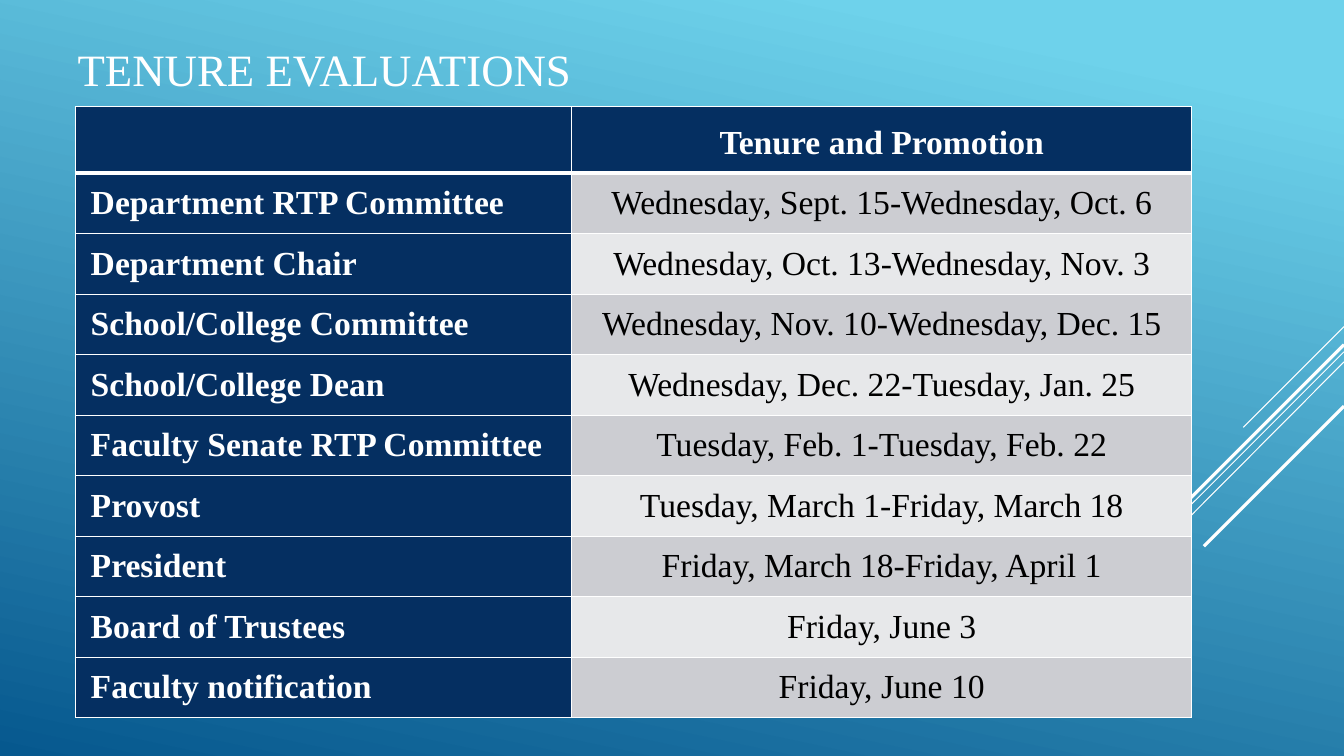
"""Build a slide with the tenure evaluation calendar."""
from lxml import etree
from pptx import Presentation
from pptx.dml.color import RGBColor
from pptx.enum.shapes import MSO_CONNECTOR
from pptx.enum.text import MSO_ANCHOR, MSO_AUTO_SIZE, PP_ALIGN
from pptx.oxml.ns import qn
from pptx.util import Inches, Pt

STRAIGHT = MSO_CONNECTOR.STRAIGHT
MIDDLE = MSO_ANCHOR.MIDDLE
NO_AUTOFIT = MSO_AUTO_SIZE.NONE
LEFT, CENTER = PP_ALIGN.LEFT, PP_ALIGN.CENTER

FONT = "Times New Roman"
COLORS = {
    "sky": "6ED2EB",
    "ocean": "06588E",
    "navy": "052F61",
    "dark_band": "CCCDD2",
    "light_band": "E7E8EA",
    "white": "FFFFFF",
    "black": "000000",
}
SCHEDULE = [
    ("", "Tenure and Promotion"),
    ("Department RTP Committee", "Wednesday, Sept. 15-Wednesday, Oct. 6"),
    ("Department Chair", "Wednesday, Oct. 13-Wednesday, Nov. 3"),
    ("School/College Committee", "Wednesday, Nov. 10-Wednesday, Dec. 15"),
    ("School/College Dean", "Wednesday, Dec. 22-Tuesday, Jan. 25"),
    ("Faculty Senate RTP Committee", "Tuesday, Feb. 1-Tuesday, Feb. 22"),
    ("Provost", "Tuesday, March 1-Friday, March 18"),
    ("President", "Friday, March 18-Friday, April 1"),
    ("Board of Trustees", "Friday, June 3"),
    ("Faculty notification", "Friday, June 10"),
]
STREAKS = [
    (3.24, 12.33, 4.24, 0.75),
    (3.49, 10.07, 6.75, 0.75),
    (3.59, 11.26, 5.67, 0.75),
    (3.42, 11.42, 5.33, 2.25),
    (4.03, 11.94, 5.42, 2.25),
]


def style_text(paragraph, size, color, bold, align):
    paragraph.alignment = align
    formats = {"name": FONT, "size": Pt(size), "bold": bold}
    for attribute, value in formats.items():
        setattr(paragraph.font, attribute, value)
    paragraph.font.color.rgb = RGBColor.from_string(COLORS[color])


def add_borders(cell, widths):
    properties = cell._tc.get_or_add_tcPr()
    for position, (side, width) in enumerate(widths.items()):
        border = etree.Element(qn(f"a:ln{side}"), w=str(Pt(width)))
        fill = etree.SubElement(border, qn("a:solidFill"))
        etree.SubElement(fill, qn("a:srgbClr"), val=COLORS["white"])
        properties.insert(position, border)


deck = Presentation()
deck.slide_width, deck.slide_height = Inches(13.33), Inches(7.5)
slide = deck.slides.add_slide(deck.slide_layouts[5])

backdrop = slide.background.fill
backdrop.gradient()
backdrop.gradient_angle = 258
for stop, position, color in zip(backdrop.gradient_stops, (0.1, 1), ("sky", "ocean")):
    stop.position = position
    stop.color.rgb = RGBColor.from_string(COLORS[color])

for top, end_x, end_y, width in STREAKS:
    streak = slide.shapes.add_connector(
        STRAIGHT, Inches(13.33), Inches(top), Inches(end_x), Inches(end_y))
    streak.line.color.rgb = RGBColor.from_string(COLORS["white"])
    streak.line.width = Pt(width)
    etree.SubElement(streak._element.spPr, qn("a:effectLst"))

heading = slide.shapes.title
heading.left, heading.top = Inches(0.67), Inches(0.39)
heading.width, heading.height = Inches(11), Inches(0.58)
heading.text_frame.text = "TENURE EVALUATIONS"
heading.text_frame.auto_size = NO_AUTOFIT
heading.text_frame.vertical_anchor = MIDDLE
style_text(heading.text_frame.paragraphs[0], 32, "white", False, LEFT)

calendar = slide.shapes.add_table(
    len(SCHEDULE), 2, Inches(0.75), Inches(1.06), Inches(11.07), Inches(6.06)).table
calendar.columns[0].width, calendar.columns[1].width = Inches(4.92), Inches(6.15)

for row, entries in enumerate(SCHEDULE):
    is_header = row == 0
    calendar.rows[row].height = Inches(0.66 if is_header else 0.6)
    band = "dark_band" if row % 2 else "light_band"
    for column, entry in enumerate(entries):
        is_label = column == 0
        is_navy = is_header or is_label
        cell = calendar.cell(row, column)
        cell.text = entry
        layout = {
            "vertical_anchor": MIDDLE,
            "margin_left": Inches(0.15 if is_label else 0.07),
            "margin_right": Inches(0.07),
            "margin_top": 0,
            "margin_bottom": 0,
        }
        for attribute, value in layout.items():
            setattr(cell, attribute, value)
        cell.fill.solid()
        cell.fill.fore_color.rgb = RGBColor.from_string(COLORS["navy" if is_navy else band])
        add_borders(cell, {"L": 1, "R": 1, "T": 3 if row == 1 else 1, "B": 3 if is_header else 1})
        line = cell.text_frame.paragraphs[0]
        style_text(line, 24, "white" if is_navy else "black", is_navy,
                   LEFT if is_label else CENTER)
        if is_header:
            line.line_spacing = 1.15
        else:
            line.space_before = line.space_after = Pt(6)

deck.save("out.pptx")
